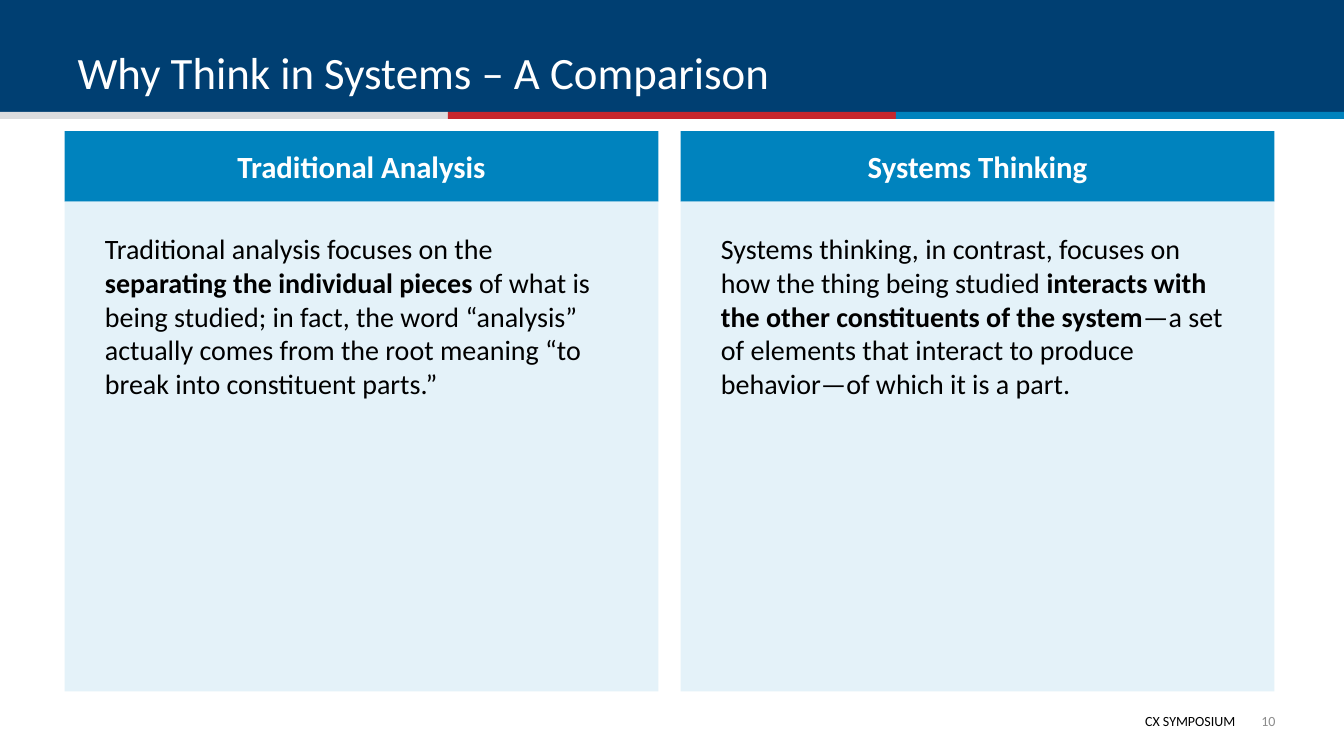
"""Build the slide comparing traditional analysis with systems thinking."""
import dataclasses

import pptx
import pptx.dml.color
import pptx.enum.shapes
import pptx.enum.text
import pptx.util

Inches = pptx.util.Inches
Align = pptx.enum.text.PP_ALIGN
Anchor = pptx.enum.text.MSO_ANCHOR


@dataclasses.dataclass(frozen=True)
class Theme:
    font: str = "Calibri"
    navy: str = "003F72"
    stripes: tuple = ("DBDCDE", "C6262D", "0082BD")
    header: str = "0083BE"
    panel: str = "E4F2F9"
    white: str = "FFFFFF"
    black: str = "000000"
    grey: str = "8C8C8C"
    title_size: int = 32
    header_size: int = 22
    body_size: int = 20
    footer_size: int = 10


theme = Theme()
WIDTH, HEIGHT = 13.33, 7.5
MARGIN, COLUMN_WIDTH, GUTTER = 0.64, 5.89, 0.22
HEADER_TOP, HEADER_HEIGHT, PANEL_HEIGHT = 1.3, 0.7, 4.86
STRIPE_WIDTH = WIDTH / len(theme.stripes)

presentation = pptx.Presentation()
presentation.slide_width, presentation.slide_height = Inches(WIDTH), Inches(HEIGHT)
slide = presentation.slides.add_slide(presentation.slide_layouts[5])


def add_block(left, top, width, height, color):
    shape = slide.shapes.add_shape(
        pptx.enum.shapes.MSO_SHAPE.RECTANGLE,
        Inches(left), Inches(top), Inches(width), Inches(height))
    shape.shadow.inherit = False
    shape.fill.solid()
    shape.fill.fore_color.rgb = pptx.dml.color.RGBColor.from_string(color)
    shape.line.fill.background()
    return shape


def write(shape, runs, size, color, align=Align.LEFT, anchor=Anchor.TOP, insets=(0.1, 0.05)):
    frame = shape.text_frame
    frame.word_wrap = True
    frame.auto_size = pptx.enum.text.MSO_AUTO_SIZE.NONE
    frame.vertical_anchor = anchor
    frame.margin_left = frame.margin_right = Inches(insets[0])
    frame.margin_top = frame.margin_bottom = Inches(insets[1])
    paragraph = frame.paragraphs[0]
    paragraph.alignment = align
    for text, bold in runs:
        run = paragraph.add_run()
        run.text = text
        run.font.name = theme.font
        run.font.size = pptx.util.Pt(size)
        run.font.bold = bold
        run.font.color.rgb = pptx.dml.color.RGBColor.from_string(color)


add_block(0, 0, WIDTH, 1.14, theme.navy)
for index, color in enumerate(theme.stripes):
    add_block(index * STRIPE_WIDTH, 1.11, STRIPE_WIDTH, 0.07, color)

title = slide.shapes.title
slide.shapes.element.append(title.element)
title.left, title.top = Inches(0.67), Inches(0.14)
title.width, title.height = Inches(12), Inches(0.89)
write(title, [("Why Think in Systems – A Comparison", False)],
      theme.title_size, theme.white, anchor=Anchor.BOTTOM)

columns = [
    ("Traditional Analysis", [
        ("Traditional analysis focuses on the ", False),
        ("separating the individual pieces", True),
        (" of what is being studied; in fact, the word “analysis” actually comes "
         "from the root meaning “to break into constituent parts.”", False)]),
    ("Systems Thinking", [
        ("Systems thinking, in contrast, focuses on how the thing being studied ", False),
        ("interacts with the other constituents of the system", True),
        ("—a set of elements that interact to produce behavior—of which it is a part.",
         False)]),
]
for index, (heading, body) in enumerate(columns):
    left = MARGIN + index * (COLUMN_WIDTH + GUTTER)
    header = add_block(left, HEADER_TOP, COLUMN_WIDTH, HEADER_HEIGHT, theme.header)
    write(header, [(heading, True)], theme.header_size, theme.white,
          Align.CENTER, Anchor.MIDDLE)
    panel = add_block(left, HEADER_TOP + HEADER_HEIGHT, COLUMN_WIDTH, PANEL_HEIGHT, theme.panel)
    write(panel, body, theme.body_size, theme.black, insets=(0.4, 0.3))

footer = slide.shapes.add_textbox(Inches(5.51), Inches(7.02), Inches(6.84), Inches(0.27))
write(footer, [("CX SYMPOSIUM", False)], theme.footer_size, theme.black, Align.RIGHT)
page_number = slide.shapes.add_textbox(Inches(12.29), Inches(6.95), Inches(0.36), Inches(0.4))
write(page_number, [("10", False)], theme.footer_size, theme.grey,
      Align.RIGHT, Anchor.MIDDLE, (0, 0))

presentation.save("out.pptx")
